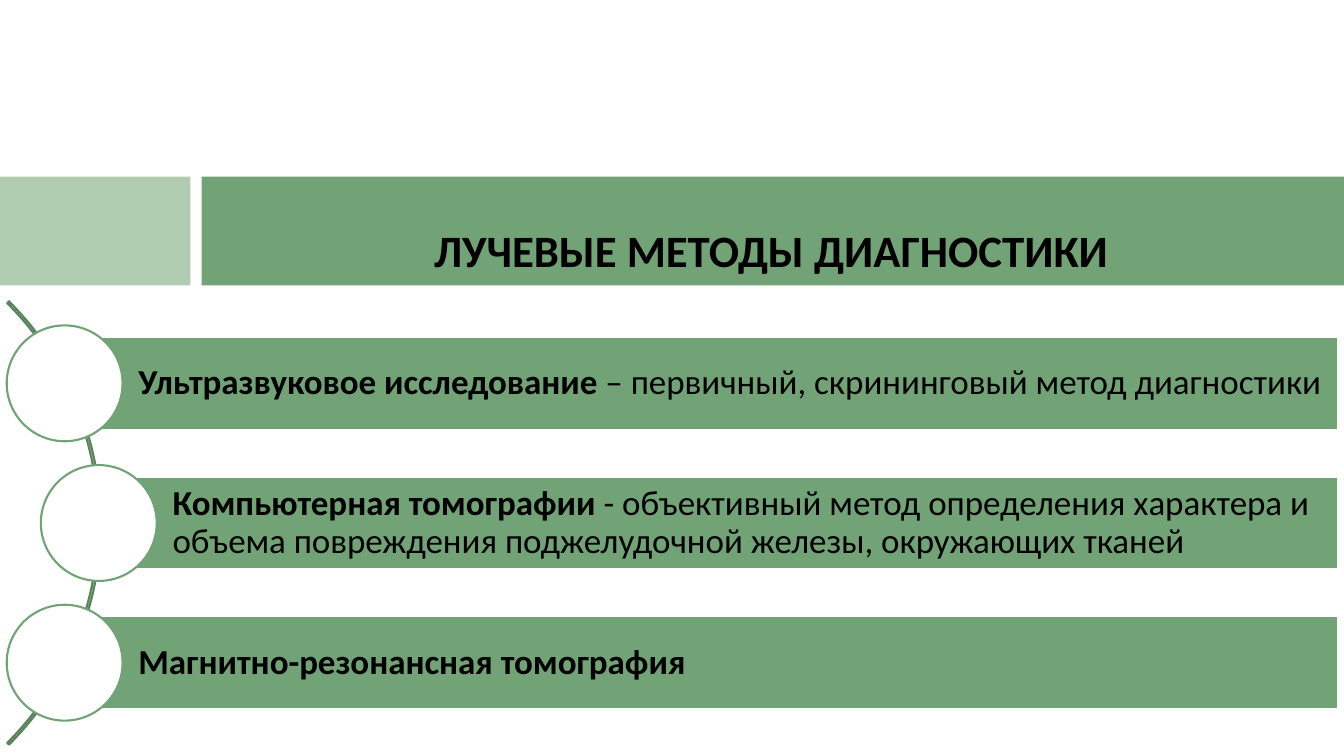
from pptx import Presentation
from pptx.dml.color import RGBColor
from pptx.enum.shapes import MSO_SHAPE as Shape
from pptx.enum.text import MSO_ANCHOR as Anchor, MSO_AUTO_SIZE as AutoSize, PP_ALIGN as Align
from pptx.util import Cm, Pt

COLORS = {
    "green": "72A376",
    "pale": "B0CCB0",
    "arc": "5B835E",
    "white": "FFFFFF",
    "black": "000000",
}
FONT = "Calibri"


class SlideBuilder:
    def __init__(self, slide):
        self.slide = slide

    def color(self, name):
        return RGBColor.from_string(COLORS[name])

    def shape(self, kind, box, fill=None, line=None):
        shape = self.slide.shapes.add_shape(kind, *map(Cm, box))
        shape.shadow.inherit = False
        if fill:
            shape.fill.solid()
            shape.fill.fore_color.rgb = self.color(fill)
        else:
            shape.fill.background()
        if line:
            shape.line.color.rgb = self.color(line)
            shape.line.width = Pt(1.5)
        else:
            shape.line.fill.background()
        return shape

    def run(self, paragraph, text, size, bold):
        run = paragraph.add_run()
        run.text = text
        run.font.name = FONT
        run.font.size = Pt(size)
        run.font.bold = bold
        run.font.color.rgb = self.color("black")

    def title(self, text, box, backdrop):
        title = self.slide.shapes.title
        title.left, title.top, title.width, title.height = map(Cm, box)
        backdrop.element.addnext(title.element)
        frame = title.text_frame
        frame.word_wrap = True
        frame.auto_size = AutoSize.NONE
        frame.vertical_anchor = Anchor.MIDDLE
        paragraph = frame.paragraphs[0]
        paragraph.alignment = Align.CENTER
        self.run(paragraph, text, 32, True)

    def arc(self, box):
        arc = self.shape(Shape.BLOCK_ARC, box, line="arc")
        for index, value in enumerate((189, 27, 0.004)):
            arc.adjustments[index] = value

    def method(self, left, middle, name, description):
        height, right, diameter = 2.34, 33.71, 2.92
        bar_box = (left, middle - height / 2, right - left, height)
        bar = self.shape(Shape.RECTANGLE, bar_box, "green", "white")
        frame = bar.text_frame
        frame.word_wrap = True
        frame.vertical_anchor = Anchor.MIDDLE
        frame.margin_left = Cm(1.86)
        frame.margin_top = frame.margin_right = frame.margin_bottom = Cm(0.18)
        paragraph = frame.paragraphs[0]
        paragraph.alignment = Align.LEFT
        paragraph.line_spacing = 0.9
        self.run(paragraph, name, 25, True)
        if description:
            self.run(paragraph, description, 25, False)
        radius = diameter / 2
        circle_box = (left - radius, middle - radius, diameter, diameter)
        self.shape(Shape.OVAL, circle_box, "white", "green")


def main():
    deck = Presentation()
    deck.slide_width, deck.slide_height = Cm(33.87), Cm(19.05)
    builder = SlideBuilder(deck.slides.add_slide(deck.slide_layouts[5]))

    builder.shape(Shape.RECTANGLE, (0, 4.45, 4.8, 2.74), "pale")
    title_band = builder.shape(Shape.RECTANGLE, (5.08, 4.45, 28.79, 2.74), "green")
    builder.title("ЛУЧЕВЫЕ МЕТОДЫ ДИАГНОСТИКИ", (5.33, 4.93, 28.22, 2.74), title_band)

    builder.arc((-13.26, 5.28, 15.8, 15.8))
    methods = [
        (1.63, "Ультразвуковое исследование ",
         "– первичный, скрининговый метод диагностики"),
        (2.49, "Компьютерная томографии ",
         "- объективный метод определения характера и объема повреждения "
         "поджелудочной железы, окружающих тканей"),
        (1.63, "Магнитно-резонансная томография", ""),
    ]
    for row, (left, name, description) in enumerate(methods):
        builder.method(left, 9.66 + 3.52 * row, name, description)

    deck.save("out.pptx")


if __name__ == "__main__":
    main()
